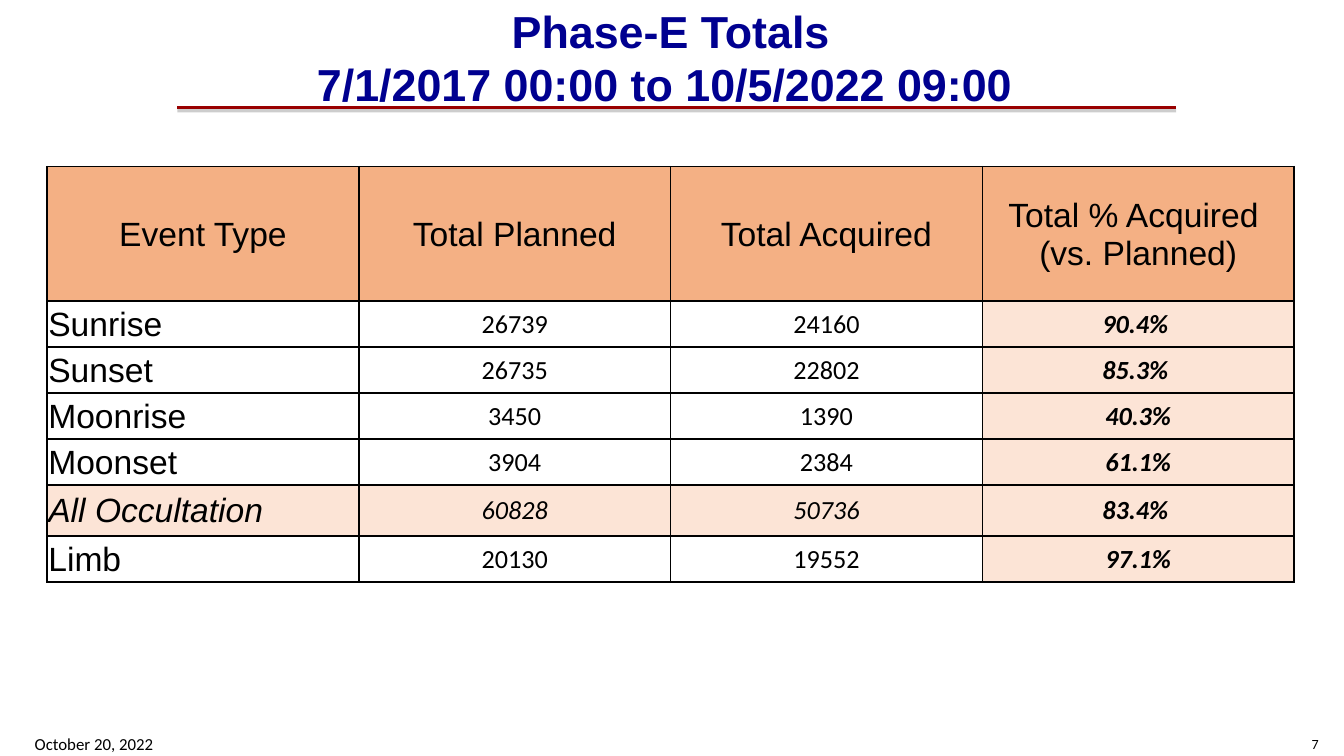
import pptx
import pptx.util
import pptx.dml.color
import pptx.enum.text
import pptx.enum.shapes
import pptx.oxml
import pptx.oxml.ns
import lxml.etree

WIDTH = 10
HEIGHT = WIDTH * 9 / 16
COLORS = {
    "text": "000000",
    "title": "000090",
    "rule": "990000",
    "shadow": "808080",
    "header": "F4B084",
    "accent": "FCE4D6",
}
HEADERS = ["Event Type", "Total Planned", "Total Acquired", "Total % Acquired \n(vs. Planned)"]
EVENTS = [
    ["Sunrise", "26739", "24160", "90.4% "],
    ["Sunset", "26735", "22802", "85.3% "],
    ["Moonrise", "3450", "1390", "40.3%"],
    ["Moonset", "3904", "2384", "61.1%"],
    ["All Occultation", "60828", "50736", "83.4% "],
    ["Limb", "20130", "19552", "97.1%"],
]
SUMMARY = "All Occultation"
COL_WIDTH, TABLE_HEIGHT, HEADER_HEIGHT, SUMMARY_HEIGHT = 2.32, 3.09, 1, 0.38
ROW_HEIGHT = (TABLE_HEIGHT - HEADER_HEIGHT - SUMMARY_HEIGHT) / (len(EVENTS) - 1)
ALIGN = pptx.enum.text.PP_ALIGN
MIDDLE = pptx.enum.text.MSO_ANCHOR.MIDDLE
inch = pptx.util.Inches


def rgb(name):
    """Return the named colour."""
    return pptx.dml.color.RGBColor.from_string(COLORS[name])


def write(tf, text, size, font, align, color="text", bold=False, italic=False):
    """Write one paragraph run by run, with a break between lines."""
    p = tf.paragraphs[0]
    p.alignment = align
    for i, line in enumerate(text.split("\n")):
        if i:
            p.add_line_break()
        r = p.add_run()
        r.text = line
        r.font.size = pptx.util.Pt(size)
        r.font.name = font
        r.font.bold = bold
        r.font.italic = italic
        r.font.color.rgb = rgb(color)


def add_label(s, box, *args, **style):
    """Add a wrapped, vertically centred text box."""
    tf = s.shapes.add_textbox(*map(inch, box)).text_frame
    tf.word_wrap = True
    tf.vertical_anchor = MIDDLE
    write(tf, *args, **style)


def add_rule(s, left, right, top):
    """Add the title rule with its drop shadow."""
    line = s.shapes.add_connector(
        pptx.enum.shapes.MSO_CONNECTOR.STRAIGHT, *map(inch, (left, top, right, top))
    )
    line.line.color.rgb = rgb("rule")
    line.line.width = pptx.util.Pt(2)
    line._element.spPr.append(pptx.oxml.parse_xml(
        f'<a:effectLst {pptx.oxml.ns.nsdecls("a")}>'
        f'<a:outerShdw blurRad="0" dist="{pptx.util.Pt(1.6)}" dir="5400000" rotWithShape="0">'
        f'<a:srgbClr val="{COLORS["shadow"]}"><a:alpha val="38000"/></a:srgbClr>'
        '</a:outerShdw></a:effectLst>'
    ))


def set_borders(cell):
    """Draw a one-point border on all four sides of a cell."""
    tcPr = cell._tc.get_or_add_tcPr()
    for side in ("lnL", "lnR", "lnT", "lnB"):
        ln = lxml.etree.SubElement(
            tcPr, pptx.oxml.ns.qn(f"a:{side}"), w=str(pptx.util.Pt(1))
        )
        fill = lxml.etree.SubElement(ln, pptx.oxml.ns.qn("a:solidFill"))
        lxml.etree.SubElement(fill, pptx.oxml.ns.qn("a:srgbClr"), val=COLORS["text"])


def fill_cell(cell, text, fill, *args, **style):
    """Set the frame, background and text of a cell."""
    cell.margin_left = cell.margin_top = cell.margin_right = inch(0.01)
    cell.margin_bottom = 0
    cell.vertical_anchor = MIDDLE
    set_borders(cell)
    if fill:
        cell.fill.solid()
        cell.fill.fore_color.rgb = rgb(fill)
    else:
        cell.fill.background()
    write(cell.text_frame, text, *args, **style)


def add_totals(s, left, top):
    """Add the table of planned and acquired events."""
    heights = [HEADER_HEIGHT] + [
        SUMMARY_HEIGHT if row[0] == SUMMARY else ROW_HEIGHT for row in EVENTS
    ]
    cols = len(HEADERS)
    table = s.shapes.add_table(
        len(heights), cols, *map(inch, (left, top, cols * COL_WIDTH, TABLE_HEIGHT))
    ).table
    for column in table.columns:
        column.width = inch(COL_WIDTH)
    for row, height in zip(table.rows, heights):
        row.height = inch(height)
    for c, text in enumerate(HEADERS):
        fill_cell(table.cell(0, c), text, "header", 18, "Arial", ALIGN.CENTER)
    for r, event in enumerate(EVENTS, 1):
        summary = event[0] == SUMMARY
        for c, text in enumerate(event):
            percent = c == cols - 1
            style = (14, "Calibri", ALIGN.CENTER) if c else (18, "Arial", ALIGN.LEFT)
            fill_cell(
                table.cell(r, c), text, "accent" if summary or percent else None,
                *style, bold=percent, italic=summary or percent,
            )


def main():
    """Build and save the slide."""
    prs = pptx.Presentation()
    prs.slide_width, prs.slide_height = inch(WIDTH), inch(HEIGHT)
    s = prs.slides.add_slide(prs.slide_layouts[6])
    add_rule(s, 1.32, 8.75, 0.8)
    add_label(
        s, (1.34, 0.16, 7.3, 0.53), "Phase-E Totals\n7/1/2017 00:00 to 10/5/2022 09:00 ",
        24, "Arial", ALIGN.CENTER, color="title", bold=True,
    )
    add_totals(s, 0.35, 1.24)
    footer_top, footer_width, footer_height = 5.44, 2.33, 0.19
    add_label(
        s, (0.16, footer_top, footer_width, footer_height),
        "October 20, 2022", 9, "Calibri", ALIGN.LEFT,
    )
    add_label(
        s, (WIDTH - 0.09 - footer_width, footer_top, footer_width, footer_height),
        "7", 7.5, "Calibri", ALIGN.RIGHT,
    )
    prs.save("out.pptx")


if __name__ == "__main__":
    main()
